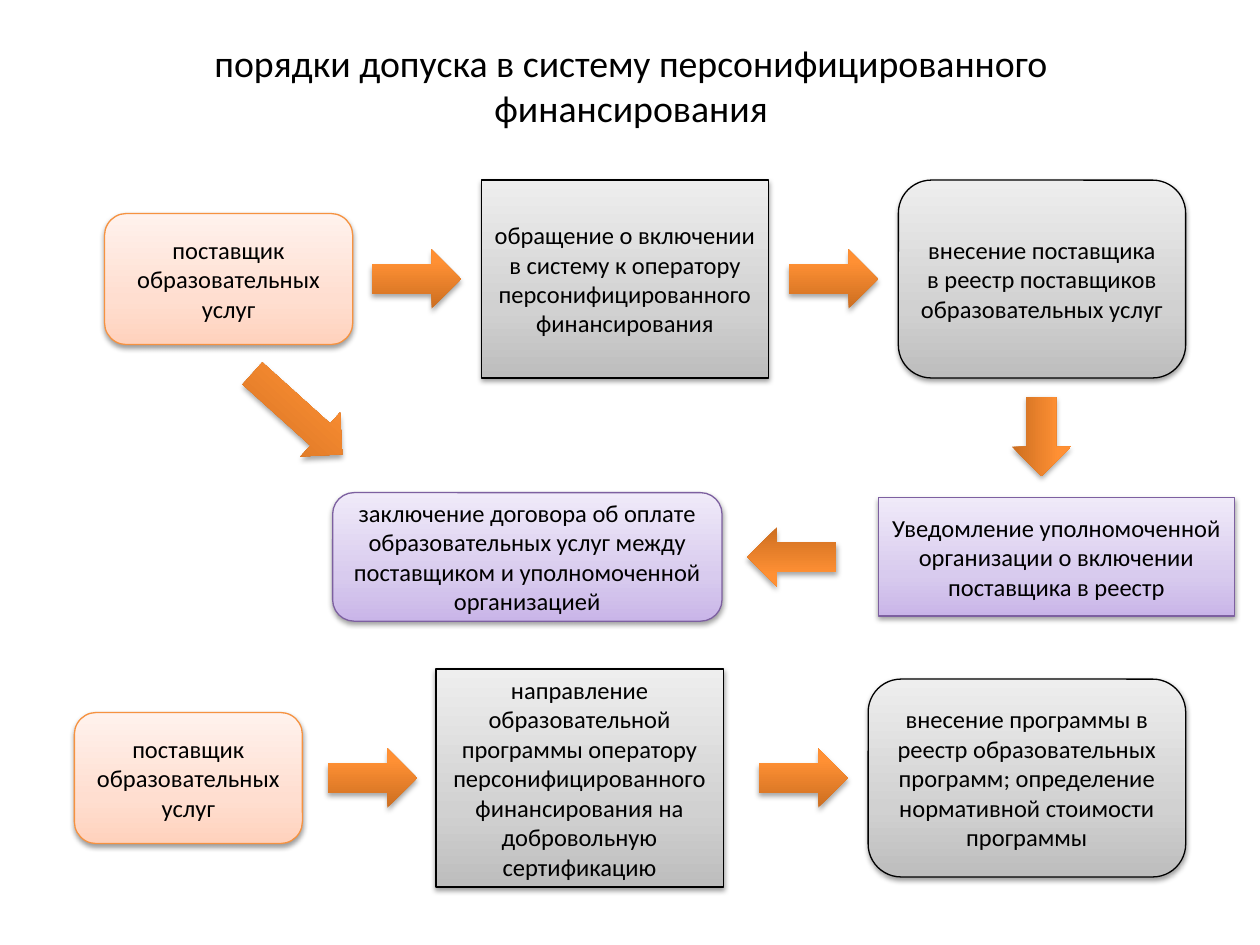
import pptx
import pptx.util
import pptx.dml.color
import pptx.enum.shapes
import pptx.enum.text
import pptx.oxml.ns
from lxml import etree

COLS, ROWS = 100, 75
UNIT = pptx.util.Inches(10) / COLS
FONT = "Calibri"
SHAPES = pptx.enum.shapes.MSO_SHAPE
COLORS = {"text": "000000", "shadow": "000000"}
# Each palette: gradient stops from bottom to top (percent, colour) and outline
PALETTES = {
    "supplier": {"stops": {0: "FFD2BD", 35: "FFDED0", 100: "FFF2ED"}, "line": "F69240"},
    "operator": {"stops": {0: "BDBDBD", 35: "D1D1D1", 100: "EEEEEE"}, "line": "000000"},
    "contract": {"stops": {0: "C9B5E8", 35: "D8CBEE", 100: "F0EAF9"}, "line": "7D60A0"},
    "arrow": {"stops": {0: "CC6E20", 80: "FF9034", 100: "FF9136"}, "line": None},
}
SUPPLIER = "поставщик образовательных услуг"
ARROW_W, ARROW_H = 7.1, 4.7


def rgb(name):
    return pptx.dml.color.RGBColor.from_string(name)


def grid(*cells):
    return [pptx.util.Emu(round(c * UNIT)) for c in cells]


def add_color(parent, tag, color, **attrs):
    """Append an a:<tag> element holding an sRGB colour and return the colour."""
    qn = pptx.oxml.ns.qn
    el = etree.SubElement(parent, qn("a:" + tag), **attrs)
    return etree.SubElement(el, qn("a:srgbClr"), val=color)


def style(sp, palette, distance, opacity):
    """Give a shape its vertical gradient, outline and soft drop shadow."""
    qn = pptx.oxml.ns.qn
    sp.fill.gradient()
    sp.fill.gradient_angle = 90
    stops = sp._element.spPr.find(".//" + qn("a:gsLst"))
    for old in list(stops):
        stops.remove(old)
    for pos, color in palette["stops"].items():
        add_color(stops, "gs", color, pos=str(pos * 1000))
    if palette["line"]:
        sp.line.color.rgb = rgb(palette["line"])
        sp.line.width = pptx.util.Pt(0.75)
    else:
        sp.line.fill.background()
    sp.shadow.inherit = False
    color = add_color(sp._element.spPr.find(qn("a:effectLst")), "outerShdw", COLORS["shadow"],
                      blurRad=str(pptx.util.Pt(3.1)), dist=str(pptx.util.Pt(distance)),
                      dir="5400000", rotWithShape="0")
    etree.SubElement(color, qn("a:alpha"), val=str(opacity * 1000))


def write(sp, text, size):
    tf = sp.text_frame
    tf.word_wrap = True
    tf.vertical_anchor = pptx.enum.text.MSO_ANCHOR.MIDDLE
    p = tf.paragraphs[0]
    p.text = text
    p.alignment = pptx.enum.text.PP_ALIGN.CENTER
    p.font.name, p.font.size = FONT, pptx.util.Pt(size)
    p.font.color.rgb = rgb(COLORS["text"])


def add_title(s, box, text):
    write(s.shapes.add_textbox(*grid(*box)), text, 21.6)


def add_step(s, box, palette, shape, text):
    sp = s.shapes.add_shape(shape, *grid(*box))
    style(sp, PALETTES[palette], 1.6, 38)
    write(sp, text, 14)


def add_arrow(s, center, length=ARROW_W, rotation=0):
    x, y = center
    box = (x - length / 2, y - ARROW_H / 2, length, ARROW_H)
    sp = s.shapes.add_shape(SHAPES.RIGHT_ARROW, *grid(*box))
    sp.rotation = rotation
    style(sp, PALETTES["arrow"], 1.8, 35)


def add_flow(s, box, steps, arrows, rotation=0):
    """Place steps and arrows on the middle line of the box.

    Steps are (left, width, height, palette, shape, text); arrows are lefts.
    """
    left, top, height = box
    middle = top + height / 2
    for x, w, h, palette, shape, text in steps:
        add_step(s, (left + x, middle - h / 2, w, h), palette, shape, text)
    for x in arrows:
        add_arrow(s, (left + x + ARROW_W / 2, middle), rotation=rotation)


def main():
    prs = pptx.Presentation()
    prs.slide_width, prs.slide_height = grid(COLS, ROWS)
    s = prs.slides.add_slide(prs.slide_layouts[6])
    rect, rounded = SHAPES.RECTANGLE, SHAPES.ROUNDED_RECTANGLE

    add_title(s, (5.1, 2.9, 90, 7.7),
              "порядки допуска в систему персонифицированного финансирования")
    add_flow(s, (8.3, 14.3, 15.7), [
        (0, 19.7, 10.4, "supplier", rounded, SUPPLIER),
        (29.9, 22.8, 15.7, "operator", rect,
         "обращение о включении в систему к оператору персонифицированного финансирования"),
        (63, 22.8, 15.7, "operator", rounded,
         "внесение поставщика в реестр поставщиков образовательных услуг"),
    ], arrows=[21.2, 54.3])
    add_arrow(s, (82.65, 34.65), length=6.3, rotation=90)
    add_arrow(s, (23.6, 32.85), length=9.6, rotation=42)
    add_flow(s, (26.4, 39.1, 10.2), [
        (43.3, 28.3, 9.4, "contract", rect,
         "Уведомление уполномоченной организации о включении поставщика в реестр"),
        (0, 30.9, 10.2, "contract", rounded,
         "заключение договора об оплате образовательных услуг между поставщиком "
         "и уполномоченной организацией"),
    ], arrows=[32.9], rotation=180)
    add_flow(s, (5.9, 53.1, 17.3), [
        (0, 18.1, 10.4, "supplier", rounded, SUPPLIER),
        (28.7, 22.8, 17.3, "operator", rect,
         "направление образовательной программы оператору персонифицированного "
         "финансирования на добровольную сертификацию"),
        (63, 25.2, 15.7, "operator", rounded,
         "внесение программы в реестр образовательных программ; "
         "определение нормативной стоимости программы"),
    ], arrows=[20.1, 54.3])
    prs.save("out.pptx")


if __name__ == "__main__":
    main()
